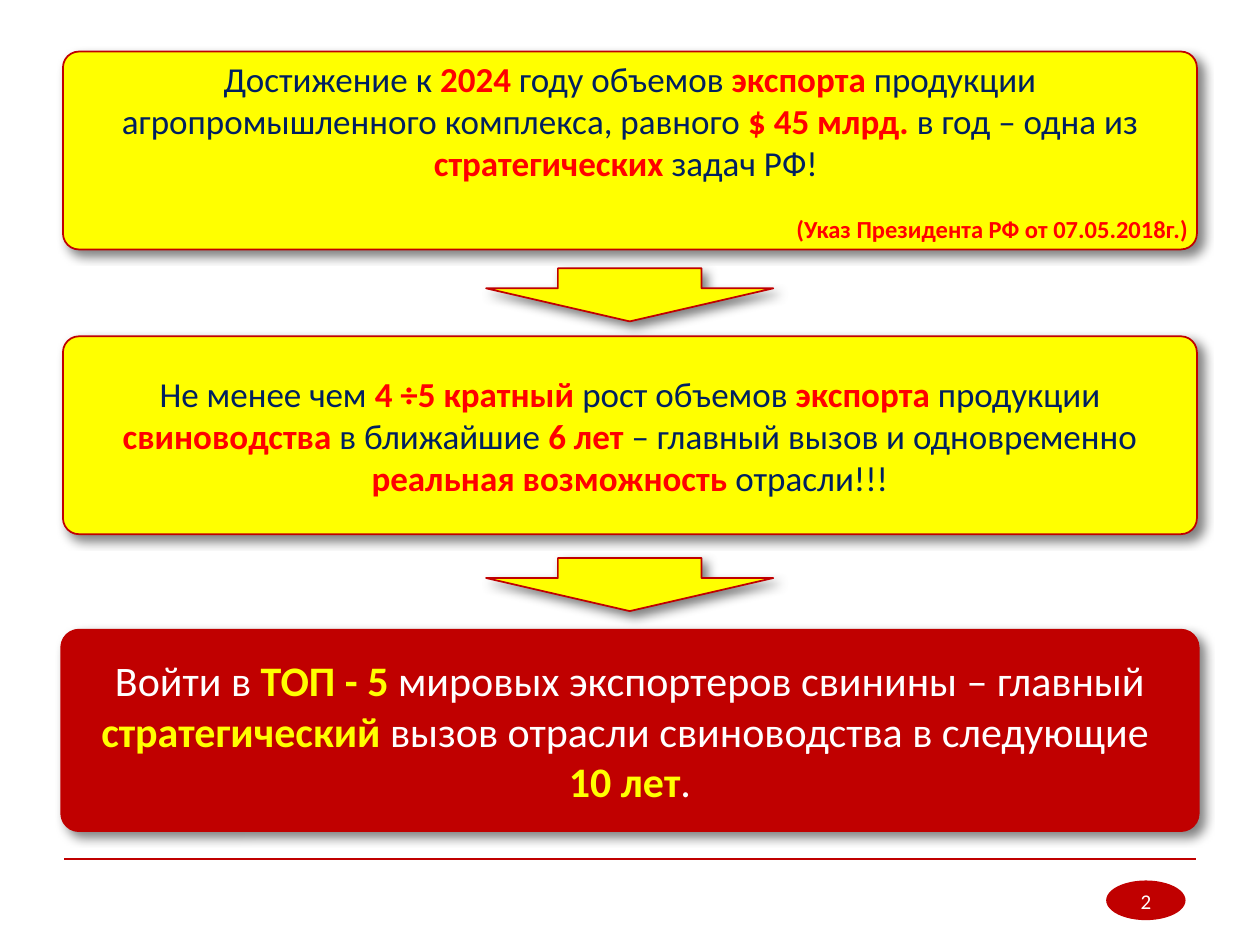
import lxml.etree
import pptx
import pptx.dml.color
import pptx.enum.shapes
import pptx.enum.text
import pptx.oxml.ns
import pptx.util
from pptx.util import Cm, Pt

RGBColor = pptx.dml.color.RGBColor
SHAPE = pptx.enum.shapes.MSO_SHAPE
ALIGN = pptx.enum.text.PP_ALIGN
RED = RGBColor(0xC0, 0x00, 0x00)
BRIGHT_RED = RGBColor(0xFF, 0x00, 0x00)
YELLOW = RGBColor(0xFF, 0xFF, 0x00)
NAVY = RGBColor(0x00, 0x20, 0x60)
WHITE = RGBColor(0xFF, 0xFF, 0xFF)

GOAL = [
    ("Достижение к ", False), ("2024", True), (" году объемов ", False),
    ("экспорта", True),
    (" продукции агропромышленного комплекса, равного ", False),
    ("$ 45 млрд. ", True), ("в год – одна из ", False),
    ("стратегических", True), (" задач РФ! ", False),
]
DECREE = [("(Указ Президента РФ от 07.05.2018г.)", True)]
GROWTH = [
    ("Не менее чем ", False), ("4 ÷5 кратный ", True),
    ("рост объемов ", False), ("экспорта", True), (" продукции ", False),
    ("свиноводства", True), (" в ближайшие ", False), ("6 лет ", True),
    ("– главный вызов и одновременно ", False),
    ("реальная возможность ", True), ("отрасли!!!", False),
]
TOP_FIVE = [
    ("Войти в ", False), ("ТОП - 5 ", True),
    ("мировых экспортеров свинины – главный ", False),
    ("стратегический ", True),
    ("вызов отрасли свиноводства в следующие ", False),
]
TERM = [("10 лет", True), (".", False)]


def add_shadow(sp):
    """Give a shape a soft grey shadow to the lower right."""
    sp.shadow.inherit = False
    qn = pptx.oxml.ns.qn
    effects = sp._element.spPr.find(qn("a:effectLst"))
    shadow = lxml.etree.SubElement(
        effects, qn("a:outerShdw"), blurRad=str(Pt(6)), dist=str(Pt(4)),
        dir=str(48 * 60000), algn="tl", rotWithShape="0")
    lxml.etree.SubElement(shadow, qn("a:srgbClr"), val="808080")


def add_block(s, kind, left, top, width, height, adjustments, fill, line_width):
    """Add a filled, red-outlined shape with a shadow."""
    sp = s.shapes.add_shape(kind, Cm(left), Cm(top), Cm(width), Cm(height))
    for i, value in enumerate(adjustments):
        sp.adjustments[i] = value
    sp.fill.solid()
    sp.fill.fore_color.rgb = fill
    sp.line.color.rgb = RED
    sp.line.width = Pt(line_width)
    add_shadow(sp)
    return sp


def add_panel(s, top, fill, line_width):
    """Add a rounded panel and return its text frame."""
    sp = add_block(s, SHAPE.ROUNDED_RECTANGLE, 1.27, top, 22.86, 3.99,
                   [0.081], fill, line_width)
    tf = sp.text_frame
    tf.word_wrap = True
    tf.vertical_anchor = pptx.enum.text.MSO_ANCHOR.MIDDLE
    tf.margin_left = tf.margin_right = Cm(0.08)
    tf.margin_top = tf.margin_bottom = Cm(0.13)
    return tf


def add_arrow(s, top):
    """Add a down arrow between two panels."""
    add_block(s, SHAPE.DOWN_ARROW, 9.8, top, 5.79, 1.07, [0.5, 0.623], YELLOW, 1)


def write_runs(p, runs, size, color, accent, align=ALIGN.CENTER):
    """Write runs into a paragraph, with key words bold in the accent colour."""
    p.alignment = align
    for text, is_key in runs:
        r = p.add_run()
        r.text = text
        r.font.name = "Calibri"
        r.font.size = Pt(size)
        r.font.bold = is_key
        r.font.color.rgb = accent if is_key else color


def add_footer(s):
    """Add the rule and the page number on its oval."""
    rule = s.shapes.add_connector(
        pptx.enum.shapes.MSO_CONNECTOR.STRAIGHT,
        Cm(24.1), Cm(17.32), Cm(1.3), Cm(17.32))
    rule.line.color.rgb = RED
    rule.line.width = Pt(1.5)
    lxml.etree.SubElement(rule._element.spPr, pptx.oxml.ns.qn("a:effectLst"))

    oval = s.shapes.add_shape(SHAPE.OVAL, Cm(22.3), Cm(17.75), Cm(1.6), Cm(0.8))
    oval.shadow.inherit = False
    oval.fill.solid()
    oval.fill.fore_color.rgb = RED
    oval.line.fill.background()

    box = s.shapes.add_textbox(Cm(21.8), Cm(17.65), Cm(2.6), Cm(1.02))
    tf = box.text_frame
    tf.word_wrap = True
    tf.vertical_anchor = pptx.enum.text.MSO_ANCHOR.MIDDLE
    write_runs(tf.paragraphs[0], [("2", False)], 12, WHITE, WHITE)


def main():
    """Build the slide and save it."""
    prs = pptx.Presentation()
    prs.slide_width, prs.slide_height = Cm(25.4), Cm(19.05)
    s = prs.slides.add_slide(prs.slide_layouts[6])
    add_footer(s)

    tf = add_panel(s, 1.04, YELLOW, 1)
    write_runs(tf.paragraphs[0], GOAL, 20, NAVY, BRIGHT_RED)
    p = tf.add_paragraph()
    p.space_before = Pt(17)
    write_runs(p, DECREE, 14, NAVY, BRIGHT_RED, ALIGN.RIGHT)

    tf = add_panel(s, 6.78, YELLOW, 1)
    write_runs(tf.paragraphs[0], GROWTH, 20, NAVY, BRIGHT_RED)

    tf = add_panel(s, 12.73, RED, 3)
    write_runs(tf.paragraphs[0], TOP_FIVE, 24, WHITE, YELLOW)
    write_runs(tf.add_paragraph(), TERM, 24, WHITE, YELLOW)

    for top in (5.41, 11.25):
        add_arrow(s, top)
    prs.save("out.pptx")


if __name__ == "__main__":
    main()
